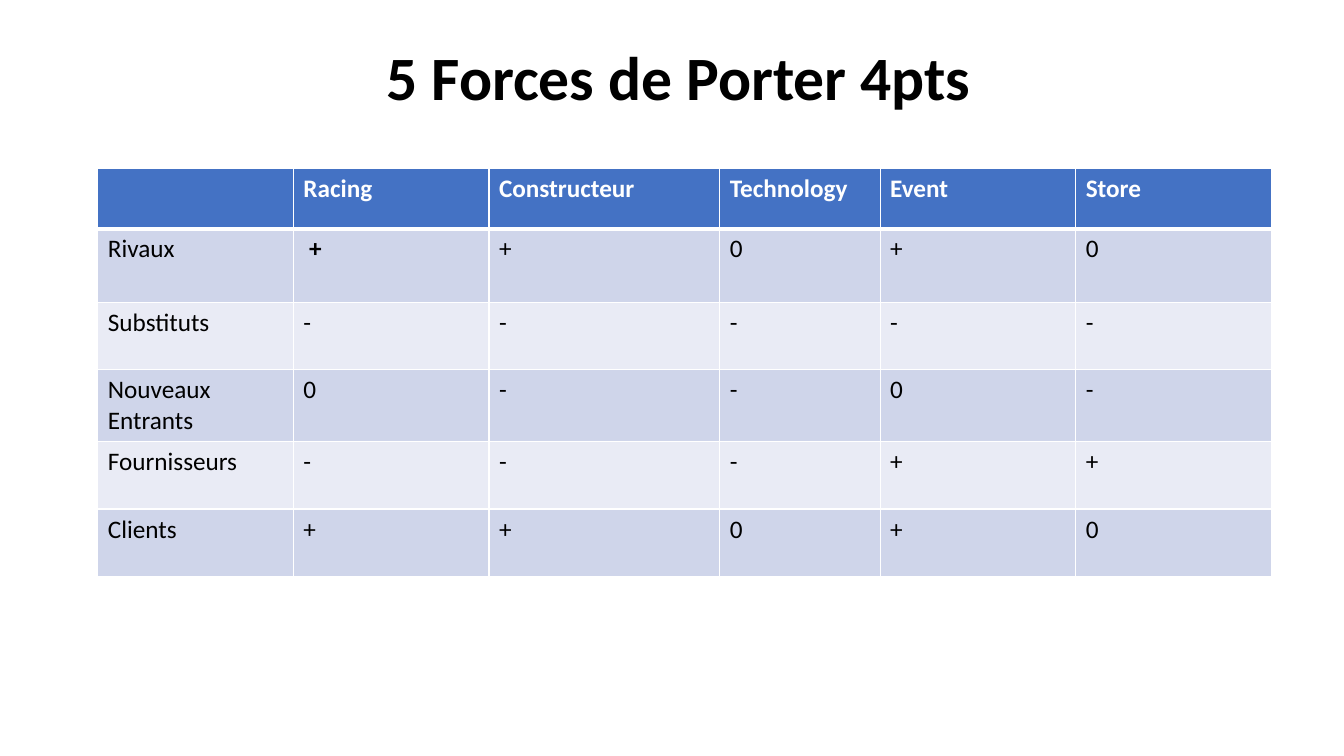
from pptx import Presentation
from pptx.dml.color import RGBColor as Rgb
from pptx.enum.text import MSO_AUTO_SIZE as AutoSize, PP_ALIGN as Align
from pptx.oxml.ns import qn
from pptx.util import Inches, Pt
from lxml.etree import SubElement

COLORS = {
    "header": "4472C4",
    "odd": "CFD5EA",
    "even": "E9EBF5",
    "light": "FFFFFF",
    "dark": "000000",
}
FONT = "Calibri"
COLUMN, CONSTRUCTEUR, TECHNOLOGY = 1.94, 2.29, 1.59
COLUMN_WIDTHS = [COLUMN, COLUMN, CONSTRUCTEUR, TECHNOLOGY, COLUMN, COLUMN]
ROW_HEIGHTS = [0.6, 0.73] + [0.67] * 4
FORCES = [
    ["", "Racing", "Constructeur", "Technology", "Event", "Store"],
    ["Rivaux", " +", "+", "0", "+", "0"],
    ["Substituts", "-", "-", "-", "-", "-"],
    ["Nouveaux Entrants", "0", "-", "-", "0", "-"],
    ["Fournisseurs", "-", "-", "-", "+", "+"],
    ["Clients", "+", "+", "0", "+", "0"],
]


def add_run(paragraph, text, size, color, bold):
    """Add one formatted run to a paragraph."""
    run = paragraph.add_run()
    run.text = text
    run.font.name = FONT
    run.font.size = Pt(size)
    run.font.bold = bold
    run.font.color.rgb = Rgb.from_string(COLORS[color])


def add_title(slide, text, left, top, width, height):
    """Add the centred bold title."""
    box = slide.shapes.add_textbox(*map(Inches, (left, top, width, height)))
    frame = box.text_frame
    frame.word_wrap = True
    frame.auto_size = AutoSize.SHAPE_TO_FIT_TEXT
    paragraph = frame.paragraphs[0]
    paragraph.alignment = Align.CENTER
    add_run(paragraph, text, 44, "dark", True)


def set_border(cell, side, points):
    """Draw one white edge of a cell."""
    properties = cell._tc.get_or_add_tcPr()
    line = SubElement(properties, qn(f"a:ln{side}"), w=str(Pt(points)))
    fill = SubElement(line, qn("a:solidFill"))
    SubElement(fill, qn("a:srgbClr"), val=COLORS["light"])


def style_cell(cell, fill, widths):
    """Give a cell its edges and its background."""
    for side, points in widths.items():
        set_border(cell, side, points)
    cell.fill.solid()
    cell.fill.fore_color.rgb = Rgb.from_string(COLORS[fill])


def add_forces_table(slide, left, top):
    """Add the banded table of forces by activity."""
    size = sum(COLUMN_WIDTHS), sum(ROW_HEIGHTS)
    frame = slide.shapes.add_table(
        len(FORCES), len(FORCES[0]), *map(Inches, (left, top, *size)))
    table = frame.table
    for column, width in zip(table.columns, COLUMN_WIDTHS):
        column.width = Inches(width)
    for index, (row, height) in enumerate(zip(table.rows, ROW_HEIGHTS)):
        row.height = Inches(height)
        is_header = index == 0
        fill = "header" if is_header else ("even", "odd")[index % 2]
        widths = {"L": 1, "R": 1, "T": 3 if index == 1 else 1,
                  "B": 3 if is_header else 1}
        for cell, text in zip(row.cells, FORCES[index]):
            style_cell(cell, fill, widths)
            if text:
                add_run(cell.text_frame.paragraphs[0], text, 18,
                        "light" if is_header else "dark",
                        is_header or text == " +")


def main():
    """Build and save the slide."""
    presentation = Presentation()
    presentation.slide_width = Inches(13.33)
    presentation.slide_height = Inches(7.5)
    slide = presentation.slides.add_slide(presentation.slide_layouts[6])
    add_forces_table(slide, 0.97, 1.67)
    add_title(slide, " 5 Forces de Porter 4pts", 3.18, 0.34, 6.97, 0.84)
    presentation.save("out.pptx")


if __name__ == "__main__":
    main()
